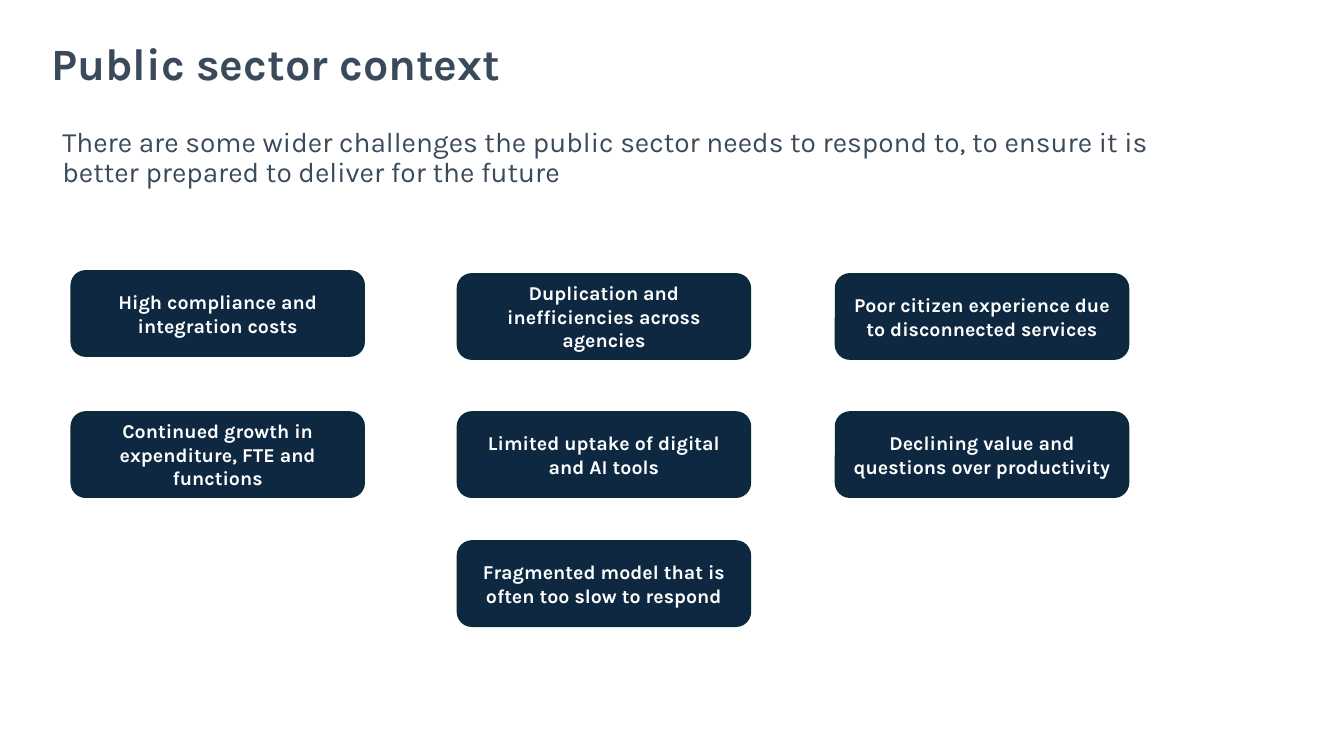
"""Build the public sector context slide with its seven challenges."""
from pptx import Presentation
from pptx.dml.color import RGBColor
from pptx.enum.shapes import MSO_SHAPE as Shape
from pptx.enum.text import MSO_ANCHOR as Anchor, PP_ALIGN as Align
from pptx.util import Inches, Pt

FONT = "Karla"
COLOURS = {"heading": "3A4A5A", "card": "0E2841", "border": "092A39", "label": "FFFFFF"}

TITLE = "Public sector context"
SUMMARY = (
    "There are some wider challenges the public sector needs to respond to, "
    "to ensure it is better prepared to deliver for the future"
)
CHALLENGES = [
    ("High compliance and integration costs", 0, 2.69),
    ("Duplication and inefficiencies across agencies", 1, 2.72),
    ("Poor citizen experience due to disconnected services", 2, 2.72),
    ("Continued growth in expenditure, FTE and functions", 0, 4.09),
    ("Limited uptake of digital and AI tools", 1, 4.09),
    ("Declining value and questions over productivity", 2, 4.09),
    ("Fragmented model that is often too slow to respond", 1, 5.37),
]
COLUMN_LEFTS = (0.71, 4.54, 8.29)
CARD_WIDTH, CARD_HEIGHT = 2.9, 0.84
HEADING_WIDTH = 11.5


def colour(name):
    """Return the named colour."""
    return RGBColor.from_string(COLOURS[name])


def write(holder, text, size, ink, bold, align, spacing):
    """Put one formatted paragraph in the holder, centred vertically."""
    frame = holder.text_frame
    frame.text = text
    frame.word_wrap = True
    frame.vertical_anchor = Anchor.MIDDLE
    paragraph = frame.paragraphs[0]
    paragraph.alignment = align
    paragraph.line_spacing = spacing
    font = paragraph.runs[0].font
    font.name, font.size, font.bold = FONT, Pt(size), bold
    font.color.rgb = colour(ink)


def add_heading(slide, text, left, top, height, size, bold):
    """Add a left-aligned heading across the slide."""
    heading = slide.shapes.add_textbox(
        Inches(left), Inches(top), Inches(HEADING_WIDTH), Inches(height)
    )
    write(heading, text, size, "heading", bold, Align.LEFT, 0.9)


def add_card(slide, challenge, column, top):
    """Add one rounded challenge card."""
    card = slide.shapes.add_shape(
        Shape.ROUNDED_RECTANGLE,
        Inches(COLUMN_LEFTS[column]), Inches(top), Inches(CARD_WIDTH), Inches(CARD_HEIGHT),
    )
    card.shadow.inherit = False
    card.fill.solid()
    card.fill.fore_color.rgb = colour("card")
    card.line.color.rgb = colour("border")
    card.line.width = Pt(1.5)
    write(card, challenge, 14, "label", True, Align.CENTER, 1.0)


def main():
    """Build and save the slide."""
    deck = Presentation()
    deck.slide_width, deck.slide_height = Inches(13.33), Inches(7.5)
    slide = deck.slides.add_slide(deck.slide_layouts[6])
    add_heading(slide, TITLE, 0.41, 0.35, 0.61, 32, True)
    add_heading(slide, SUMMARY, 0.52, 1.2, 0.74, 20, False)
    for challenge, column, top in CHALLENGES:
        add_card(slide, challenge, column, top)
    deck.save("out.pptx")


if __name__ == "__main__":
    main()
